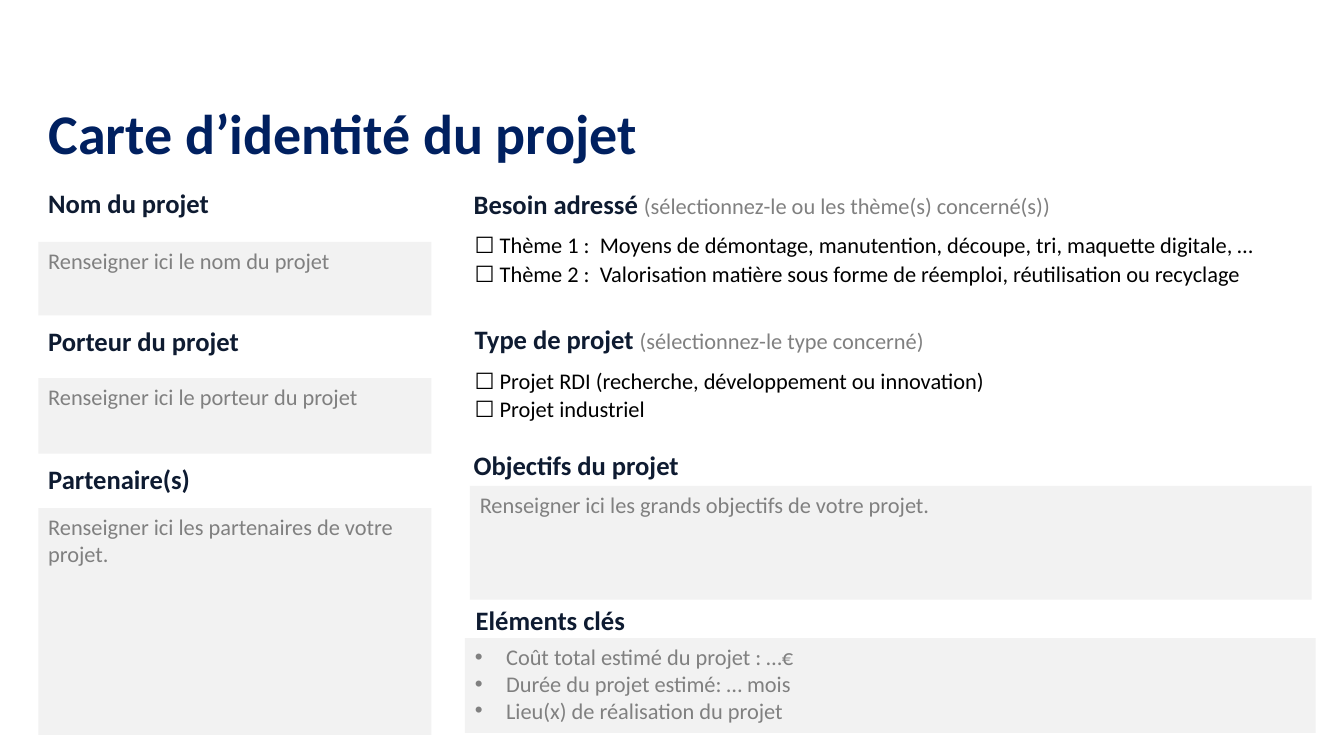
import pptx
import pptx.util
import pptx.dml.color
import pptx.enum.shapes
import pptx.enum.text
import pptx.oxml
import pptx.oxml.ns

Inches = pptx.util.Inches
Align = pptx.enum.text.PP_ALIGN
Anchor = pptx.enum.text.MSO_ANCHOR
Fit = pptx.enum.text.MSO_AUTO_SIZE

HUES = {"title": "002060", "head": "0E1B31", "hint": "808080", "text": "000000", "box": "F2F2F2"}
FONTS = {
    "title": {"size": pptx.util.Pt(40), "bold": True},
    "head": {"size": pptx.util.Pt(19), "bold": True},
    "hint": {"size": pptx.util.Pt(16), "bold": False},
    "text": {"size": pptx.util.Pt(16), "bold": False},
}


def apply(item, values):
    """Set each named attribute of the item."""
    for name, value in values.items():
        setattr(item, name, value)


class Card:
    """Holds the style and the current slide."""

    def __init__(self, deck, face="Calibri"):
        """Add a slide with a title and a list."""
        self.face = face
        self.slide = deck.slides.add_slide(deck.slide_layouts[1])

    def place(self, shape, at):
        """Move and size a shape."""
        apply(shape, dict(zip(("left", "top", "width", "height"), map(Inches, at))))

    def paint(self, shape):
        """Give a shape the grey fill of an entry box."""
        shape.fill.solid()
        shape.fill.fore_color.rgb = pptx.dml.color.RGBColor.from_string(HUES["box"])

    def letter(self, shape, lines, wrap=True, fit=Fit.NONE, anchor=Anchor.TOP,
               align=Align.LEFT, space=1.0, bullet=False):
        """Fill a shape with lines, each a list of (text, style) runs."""
        frame = shape.text_frame
        apply(frame, {"word_wrap": wrap, "auto_size": fit, "vertical_anchor": anchor})
        for row, runs in enumerate(lines):
            para = frame.add_paragraph() if row else frame.paragraphs[0]
            apply(para, {"alignment": align, "line_spacing": space,
                         "space_before": pptx.util.Pt(0)})
            if bullet:
                self.mark(para)
            for text, style in runs:
                run = para.add_run()
                run.text = text
                apply(run.font, {"name": self.face, **FONTS[style]})
                run.font.color.rgb = pptx.dml.color.RGBColor.from_string(HUES[style])

    def mark(self, para):
        """Give a paragraph a round bullet and a hanging indent."""
        props = para._p.get_or_add_pPr()
        props.set("marL", str(Inches(0.31)))
        props.set("indent", str(-Inches(0.31)))
        for tag, key, value in (("buFont", "typeface", "Arial"), ("buChar", "char", "•")):
            node = pptx.oxml.ns.qn("a:" + tag)
            props.append(props.makeelement(node, {key: value}))

    def title(self, at, text):
        """Set the slide title."""
        shape = self.slide.shapes.title
        self.place(shape, at)
        self.letter(shape, [[(text, "title")]], anchor=Anchor.MIDDLE, space=0.9)

    def points(self, at, texts):
        """Set the bulleted list on a grey ground."""
        shape = self.slide.placeholders[1]
        self.place(shape, at)
        self.paint(shape)
        self.letter(shape, [[(text, "hint")] for text in texts],
                    align=Align.JUSTIFY, bullet=True)

    def label(self, at, head, hint=""):
        """Add a heading, with a grey hint after it if given."""
        shape = self.slide.shapes.add_textbox(*map(Inches, at))
        runs = [(head + " ", "head"), (hint, "hint")] if hint else [(head, "head")]
        self.letter(shape, [runs], fit=Fit.SHAPE_TO_FIT_TEXT)

    def entry(self, at, text, align=Align.JUSTIFY):
        """Draw a grey box to fill in."""
        kind = pptx.enum.shapes.MSO_SHAPE.RECTANGLE
        shape = self.slide.shapes.add_shape(kind, *map(Inches, at))
        shape.shadow.inherit = False
        shape.line.fill.background()
        self.paint(shape)
        self.letter(shape, [[(text, "hint")]], align=align)

    def checks(self, at, texts):
        """Add options, each after an empty tick box."""
        shape = self.slide.shapes.add_textbox(*map(Inches, at))
        self.letter(shape, [[("☐ " + text, "text")] for text in texts],
                    wrap=False, fit=Fit.SHAPE_TO_FIT_TEXT, space=1.07)


def main():
    """Build the project card."""
    deck = pptx.Presentation()
    apply(deck, {"slide_width": Inches(13.33), "slide_height": Inches(7.5)})
    card = Card(deck)
    card.title((0.38, 0.9, 9.53, 0.91), "Carte d’identité du projet")

    left, wide = 0.38, 3.9
    for head, y, text, top, high, align in (
        ("Nom du projet", 1.81, "Renseigner ici le nom du projet", 2.4, 0.73, Align.JUSTIFY),
        ("Porteur du projet", 3.17, "Renseigner ici le porteur du projet", 3.75, 0.75,
         Align.JUSTIFY),
        ("Partenaire(s)", 4.54, "Renseigner ici les partenaires de votre projet.", 5.04, 2.25,
         Align.LEFT),
    ):
        card.label((left, y, wide, 0.42), head)
        card.entry((left, top, wide, high), text, align)

    card.label((4.6, 1.82, 7.14, 0.74), "Besoin adressé",
               "(sélectionnez-le ou les thème(s) concerné(s))")
    card.checks((4.61, 2.23, 8.07, 0.66), (
        "Thème 1 :  Moyens de démontage, manutention, découpe, tri, maquette digitale, …",
        "Thème 2 :  Valorisation matière sous forme de réemploi, réutilisation ou recyclage"))
    card.label((4.61, 3.15, 7.14, 0.74), "Type de projet", "(sélectionnez-le type concerné)")
    card.checks((4.61, 3.57, 5.37, 0.66), (
        "Projet RDI (recherche, développement ou innovation)", "Projet industriel"))
    card.label((4.6, 4.4, 5.86, 0.42), "Objectifs du projet")
    card.entry((4.66, 4.82, 8.35, 1.13), "Renseigner ici les grands objectifs de votre projet.")
    card.label((4.62, 5.94, 2.01, 0.43), "Eléments clés")
    card.points((4.61, 6.33, 8.44, 0.94), (
        "Coût total estimé du projet : …€",
        "Durée du projet estimé: … mois",
        "Lieu(x) de réalisation du projet"))
    deck.save("out.pptx")


if __name__ == "__main__":
    main()
